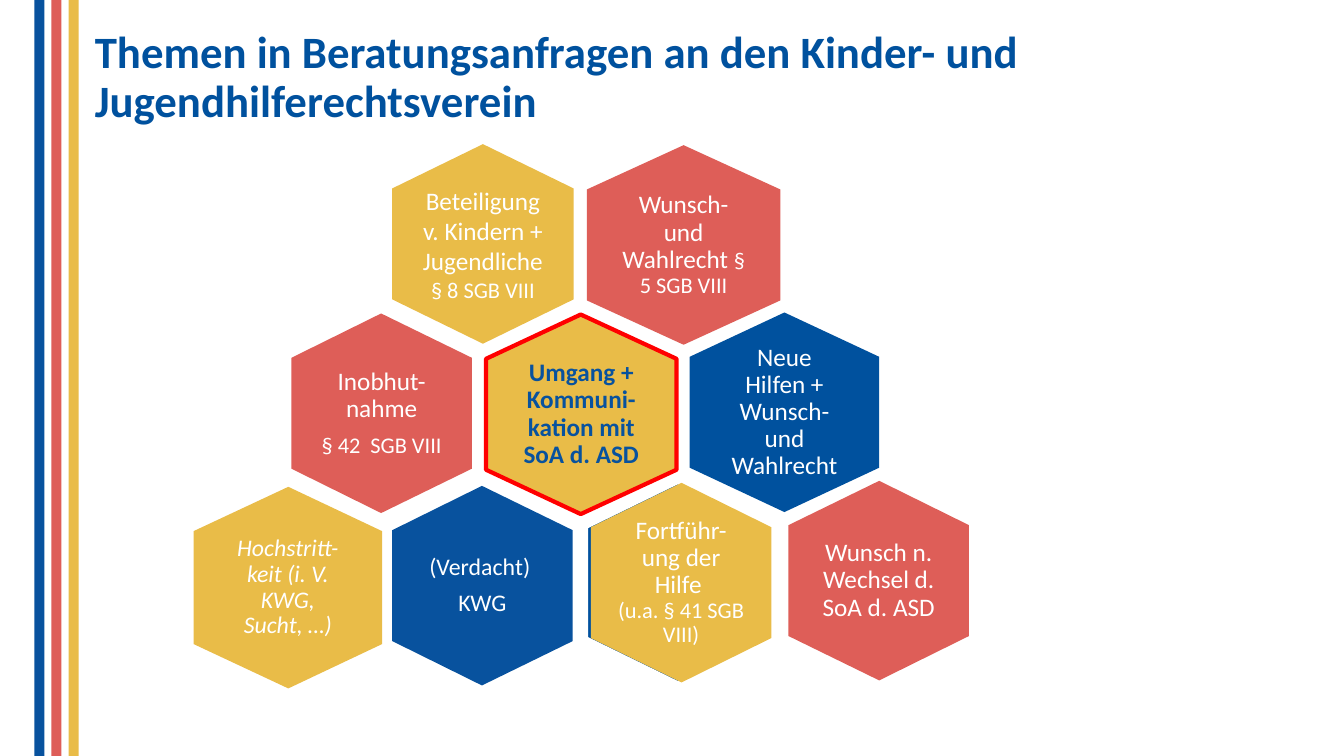
import pptx
import pptx.util
import pptx.dml.color
import pptx.enum.shapes
import pptx.enum.text

PX = 9144
INK = {"navy": "08529E", "blue": "00519E", "coral": "DE5D58", "red": "DE5E58",
       "gold": "E9BC48", "white": "FFFFFF", "alert": "FF0000"}

TITLE = "Themen in Beratungsanfragen an den Kinder- und Jugendhilferechtsverein"
STRIPES = ["navy", "coral", "gold"]
SLIM, WIDE = (27, 31), (35, 39)

CELLS = [
    dict(box=(582, 144, 192, 198), fill="red", pad=WIDE,
         text=[[("Wunsch- und Wahlrecht ", 18), ("§ 5 SGB VIII", 16)]]),
    dict(box=(389, 143, 180, 198), fill="gold", lead=1.0,
         text=[[("Beteiligung v. Kindern + Jugendliche", 18)], [("§ 8 SGB VIII", 16)]]),
    dict(box=(684, 310, 188, 198), fill="blue", pad=WIDE,
         text=[[("Neue Hilfen + Wunsch- und Wahlrecht", 18)]]),
    dict(box=(482, 312, 189, 198), fill="gold", line=("alert", 3), after=[8],
         ink="navy", bold=True, text=[[("Umgang + Kommuni-kation mit SoA d. ASD", 18)]]),
    dict(box=(582, 479, 179, 198), fill="blue", line=("white", 2)),
    dict(box=(289, 311, 179, 198), fill="red", after=[8, 7],
         text=[[("Inobhut-nahme", 18)], [("§ 42  SGB VIII", 16)]]),
    dict(box=(389, 482, 179, 198), fill="navy", pad=(34, 38), after=[7, 7],
         text=[[("(Verdacht) ", 17)], [("KWG", 17)]]),
    dict(box=(586, 479, 179, 198), fill="gold",
         text=[[("Fortführ-ung der Hilfe ", 18)], [("(u.a. § 41 SGB VIII)", 16)]]),
    dict(box=(192, 483, 187, 200), fill="gold", pad=(37, 39), after=[7], italic=True,
         text=[[("Hochstritt- keit (i. V. KWG, Sucht, …)", 17)]]),
    dict(box=(782, 477, 179, 198), fill="red", after=[8],
         text=[[("Wunsch n. Wechsel d. SoA d. ASD", 18)]]),
]


def tint(name):
    return pptx.dml.color.RGBColor.from_string(INK[name])


def write(shape, text, pad=SLIM, ink="white", bold=False, italic=False,
          lead=0.9, after=(), align="CENTER"):
    frame = shape.text_frame
    frame.word_wrap = True
    frame.vertical_anchor = pptx.enum.text.MSO_ANCHOR.MIDDLE
    frame.margin_left = frame.margin_right = pad[0] * PX
    frame.margin_top = frame.margin_bottom = pad[1] * PX
    for i, runs in enumerate(text):
        para = frame.add_paragraph() if i else frame.paragraphs[0]
        para.alignment = pptx.enum.text.PP_ALIGN[align]
        para.line_spacing = lead
        para.space_after = pptx.util.Pt(after[i] if after else 0)
        for words, size in runs:
            run = para.add_run()
            run.text = words
            run.font.name = "Calibri"
            run.font.size = pptx.util.Pt(size)
            run.font.bold = bold
            run.font.italic = italic
            run.font.color.rgb = tint(ink)


def paint(shape, fill, line=None):
    shape.shadow.inherit = False
    shape.fill.solid()
    shape.fill.fore_color.rgb = tint(fill)
    if line:
        shape.line.color.rgb = tint(line[0])
        shape.line.width = pptx.util.Pt(line[1])
    else:
        shape.line.fill.background()


def hexa(slide, box, fill, line=None, text=(), **form):
    x, y, w, h = box
    cut = round(h * 0.22)
    mid, right, low = x + w / 2, x + w, y + h
    pen = slide.shapes.build_freeform(mid, y, scale=PX)
    pen.add_line_segments([(right, y + cut), (right, low - cut), (mid, low),
                           (x, low - cut), (x, y + cut)], close=True)
    shape = pen.convert_to_shape()
    paint(shape, fill, line)
    if text:
        write(shape, text, **form)


def main():
    deck = pptx.Presentation()
    deck.slide_width, deck.slide_height = 1333 * PX, 750 * PX
    slide = deck.slides.add_slide(deck.slide_layouts[6])
    for i, fill in enumerate(STRIPES):
        bar = slide.shapes.add_shape(pptx.enum.shapes.MSO_SHAPE.RECTANGLE,
                                     (34 + 17 * i) * PX, 0, 10 * PX, 750 * PX)
        paint(bar, fill)
    head = slide.shapes.add_textbox(94 * PX, 15 * PX, 1179 * PX, 126 * PX)
    write(head, [[(TITLE, 32)]], pad=(0, 0), ink="blue", bold=True, align="LEFT")
    for cell in CELLS:
        hexa(slide, **cell)
    deck.save("out.pptx")


if __name__ == "__main__":
    main()
